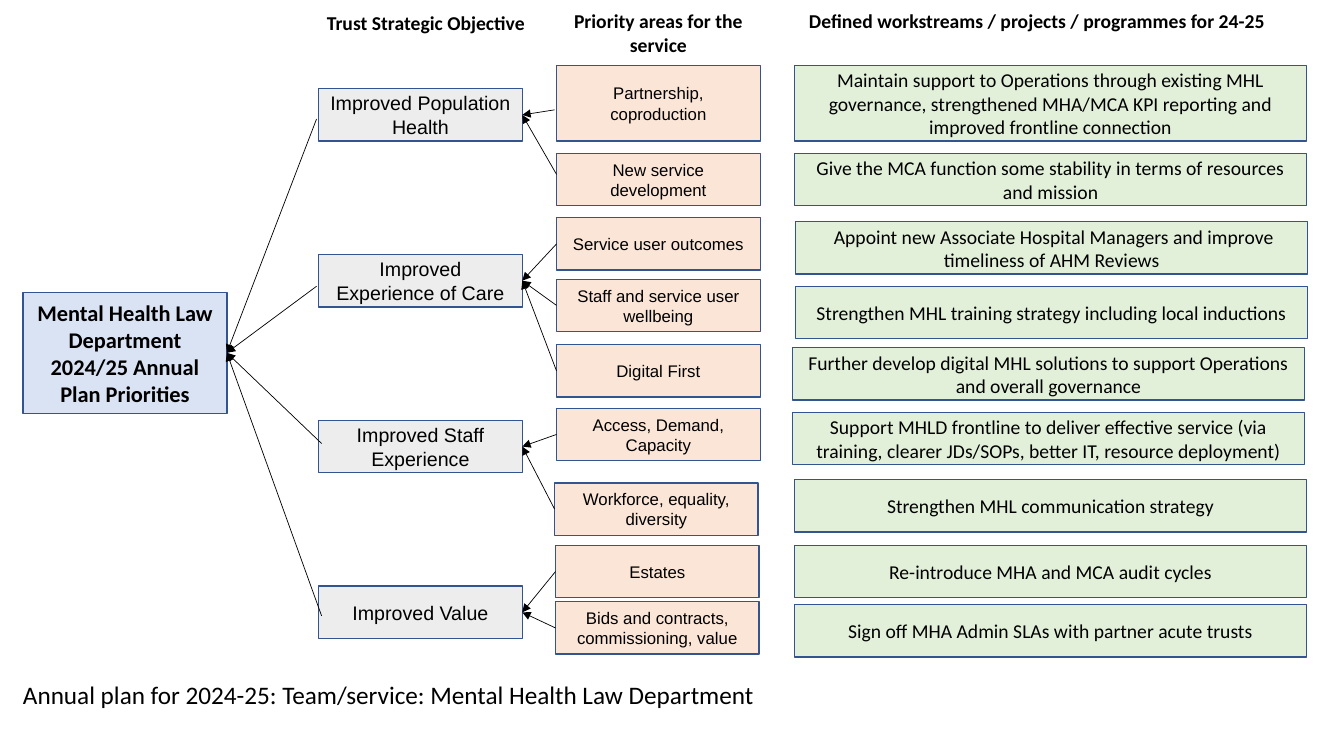
from pptx import Presentation
from pptx.dml.color import RGBColor
from pptx.enum import shapes, text
from pptx.oxml import parse_xml
from pptx.oxml.ns import nsdecls
from pptx.util import Inches, Pt

# Content
DEPT = "Mental Health Law Department 2024/25 Annual Plan Priorities"
# objective, start of its arrow, priorities: (text, left, top, height, loose start of arrow)
GOALS = [
    ("Improved Population Health", (3.14, 1.18), [
        ("Partnership, coproduction", 5.52, 0.65, 0.75, (5.5, 1.09)),
        ("New service development", 5.52, 1.52, 0.52, (5.52, 1.73))]),
    ("Improved Experience of Care", (3.14, 2.84), [
        ("Service user outcomes", 5.52, 2.16, 0.52, None),
        ("Staff and service user wellbeing", 5.52, 2.77, 0.52, None),
        ("Digital First", 5.52, 3.42, 0.52, None)]),
    ("Improved Staff Experience", (3.19, 4.4), [
        ("Access, Demand, Capacity", 5.52, 4.05, 0.52, None),
        ("Workforce, equality, diversity", 5.5, 4.79, 0.52, None)]),
    ("Improved Value", (3.19, 6.11), [
        ("Estates", 5.51, 5.41, 0.52, None),
        ("Bids and contracts, commissioning, value", 5.51, 5.97, 0.52, None)]),
]
# text, left, top, height
WORK = [
    ("Maintain support to Operations through existing MHL governance, "
     "strengthened MHA/MCA KPI reporting and improved frontline connection", 7.88, 0.65, 0.75),
    ("Give the MCA function some stability in terms of resources and mission", 7.88, 1.52, 0.52),
    (" Appoint new Associate Hospital Managers and improve timeliness of AHM Reviews",
     7.89, 2.2, 0.52),
    ("Strengthen MHL training strategy including local inductions", 7.89, 2.84, 0.52),
    ("Further develop digital MHL solutions to support Operations and overall governance",
     7.86, 3.45, 0.52),
    ("Support MHLD frontline to deliver effective service (via training, clearer JDs/SOPs, "
     "better IT, resource deployment)", 7.86, 4.09, 0.52),
    ("Strengthen MHL communication strategy", 7.88, 4.76, 0.52),
    ("Re-introduce MHA and MCA audit cycles", 7.88, 5.41, 0.52),
    ("Sign off MHA Admin SLAs with partner acute trusts", 7.88, 6, 0.52),
]
HEADS = [
    ("Trust Strategic Objective", (3.01, 0.06, 2.43, 0.34)),
    ("Priority areas for the service", (5.52, 0.04, 2.02, 0.57)),
    ("Defined workstreams / projects / programmes for 24-25", (7.79, 0.04, 4.99, 0.34)),
]
TITLE = "Annual plan for 2024-25: Team/service: Mental Health Law Department"
HUE = {"dept": "DAE3F3", "goal": "EDEDED", "area": "FBE5D6", "work": "E2F0D9",
       "edge": "325491", "ink": "000000"}
WIDE, HIGH = 2.02, 0.52
GOAL_X, GOAL_Y, GOAL_STEP = 3.16, 0.88, 1.645

deck = Presentation()
deck.slide_width, deck.slide_height = Inches(13.33), Inches(7.5)
slide = deck.slides.add_slide(deck.slide_layouts[6])


def color(name):
    return RGBColor.from_string(HUE[name])


def write(shape, words, size, font="Calibri", bold=False, center=True):
    frame = shape.text_frame
    frame.word_wrap = True
    para = frame.paragraphs[0]
    para.alignment = text.PP_ALIGN.CENTER if center else text.PP_ALIGN.LEFT
    run = para.add_run()
    run.text = words
    run.font.size, run.font.name, run.font.bold = Pt(size), font, bold
    run.font.color.rgb = color("ink")


def box(words, at, fill, size, font="Calibri", bold=False):
    shape = slide.shapes.add_shape(shapes.MSO_SHAPE.RECTANGLE, *map(Inches, at))
    shape.shadow.inherit = False
    shape.fill.solid()
    shape.fill.fore_color.rgb = color(fill)
    shape.line.color.rgb = color("edge")
    shape.line.width = Pt(1)
    shape.text_frame.vertical_anchor = text.MSO_ANCHOR.MIDDLE
    write(shape, words, size, font, bold)
    return shape


def label(words, at, size, bold=True, center=True):
    shape = slide.shapes.add_textbox(*map(Inches, at))
    write(shape, words, size, bold=bold, center=center)
    shape.text_frame.auto_size = text.MSO_AUTO_SIZE.SHAPE_TO_FIT_TEXT


def arrow(source, target, start=None):
    """Runs from a loose start, or the source's left side, to the target's right side."""
    x, y = map(Inches, start or (0, 0))
    line = slide.shapes.add_connector(shapes.MSO_CONNECTOR.STRAIGHT, x, y, x, y)
    if start is None:
        line.begin_connect(source, 1)
    line.end_connect(target, 3)
    line.line.color.rgb = color("ink")
    line.line.width = Pt(0.5)
    line.line._get_or_add_ln().append(
        parse_xml(f'<a:tailEnd {nsdecls("a")} type="triangle"/>'))
    line._element.spPr.append(parse_xml(f'<a:effectLst {nsdecls("a")}/>'))


# Department, objectives and priority areas
dept = box(DEPT, (0.23, 2.9, WIDE, 1.2), "dept", 16, bold=True)
for i, (name, start, areas) in enumerate(GOALS):
    goal = box(name, (GOAL_X, GOAL_Y + i * GOAL_STEP, WIDE, HIGH), "goal", 14, "Arial")
    arrow(goal, dept, start)
    for words, x, y, tall, loose in areas:
        area = box(words, (x, y, WIDE, tall), "area", 12, "Arial")
        arrow(area, goal, loose)

# Workstreams
for words, x, y, tall in WORK:
    box(words, (x, y, 5.08, tall), "work", 14)

# Column heads and title
for words, at in HEADS:
    label(words, at, 14)
label(TITLE, (0.13, 6.69, 8.47, 0.4), 18, bold=False, center=False)

deck.save("out.pptx")
